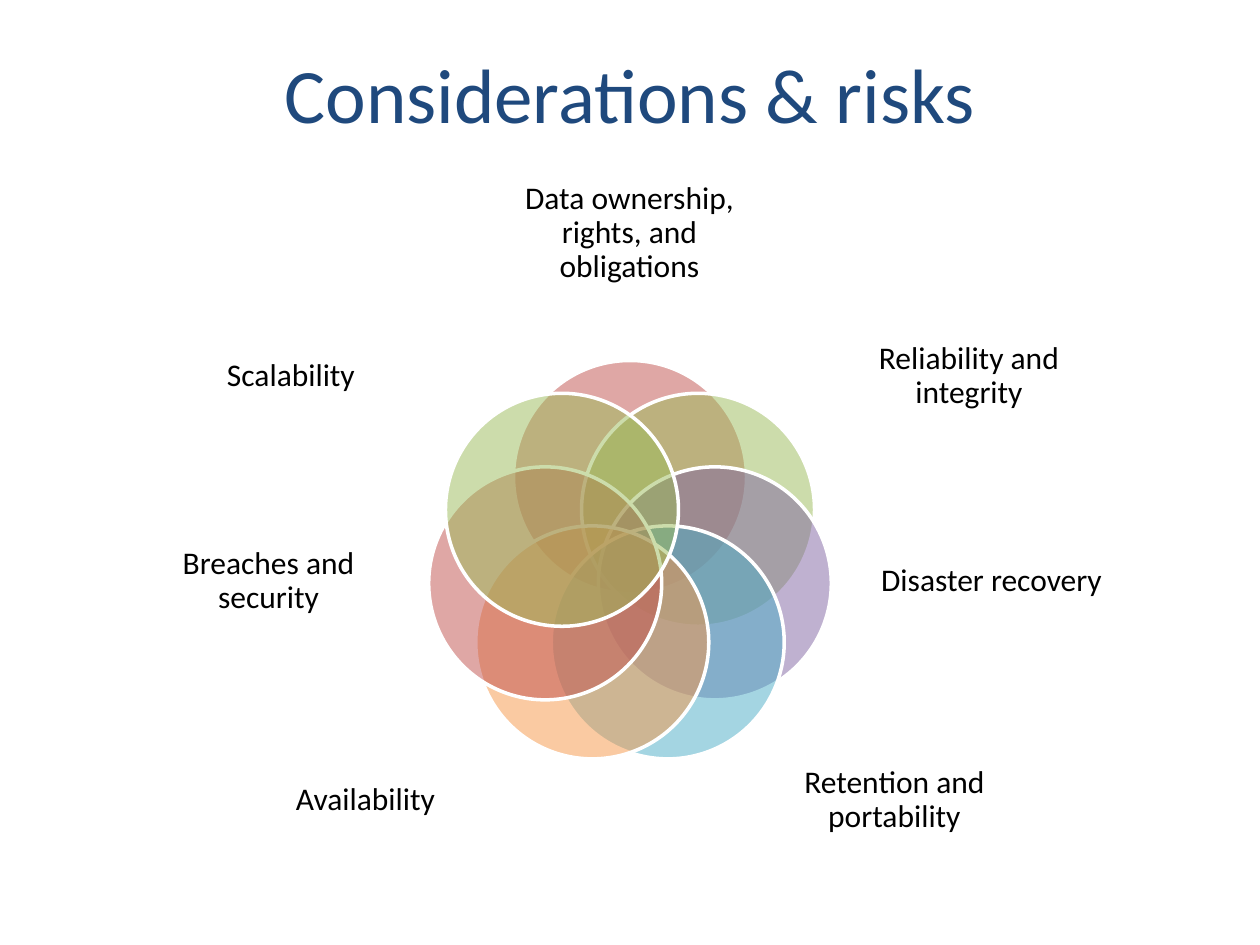
"""Build the considerations and risks slide: seven overlapping circles with labels."""
from math import cos, pi, sin

from lxml import etree
from pptx import Presentation
from pptx.dml.color import RGBColor
from pptx.enum.shapes import MSO_SHAPE
from pptx.enum.text import MSO_ANCHOR, PP_ALIGN
from pptx.oxml.ns import qn
from pptx.util import Inches, Pt

OVAL = MSO_SHAPE.OVAL
MIDDLE = MSO_ANCHOR.MIDDLE
CENTER = PP_ALIGN.CENTER

NAVY = RGBColor(0x1F, 0x49, 0x7D)
BLACK = RGBColor(0x00, 0x00, 0x00)
WHITE = RGBColor(0xFF, 0xFF, 0xFF)
RED = RGBColor(0xC0, 0x50, 0x4D)
GREEN = RGBColor(0x9B, 0xBB, 0x59)
PURPLE = RGBColor(0x80, 0x64, 0xA2)
AQUA = RGBColor(0x4B, 0xAC, 0xC6)
ORANGE = RGBColor(0xF7, 0x96, 0x46)

TITLE = "Considerations & risks"
RISKS = [
    ("Data ownership, rights, and obligations", RED),
    ("Reliability and integrity", GREEN),
    ("Disaster recovery", PURPLE),
    ("Retention and portability", AQUA),
    ("Availability", ORANGE),
    ("Breaches and security", RED),
    ("Scalability", GREEN),
]

PX = Inches(1) / 126
PAGE_WIDTH, PAGE_HEIGHT = 1260, 945
TITLE_BOX = (63, 38, 1134, 110)
TOP_LABEL = (496, 179, 267, 142)
RIGHT_LABELS = [(843, 314, 252, 158), (868, 514, 247, 168), (761, 740, 267, 154)]
LEFT_LABELS = [
    (PAGE_WIDTH - left - width, top, width, height)
    for left, top, width, height in reversed(RIGHT_LABELS)
]
LABEL_BOXES = [TOP_LABEL, *RIGHT_LABELS, *LEFT_LABELS]
RING_X, RING_Y, RING_RADIUS = 630, 564, 87
DIAMETER = 233
LABEL_LIFT = 34


def emu(*lengths):
    return [round(length * PX) for length in lengths]


def format_text(para, size, color):
    para.alignment = CENTER
    para.font.name = "Calibri"
    para.font.size = Pt(size)
    para.font.color.rgb = color


def add_circle(shapes, index, color):
    angle = 2 * pi * index / len(RISKS)
    left = RING_X + RING_RADIUS * sin(angle) - DIAMETER / 2
    top = RING_Y - RING_RADIUS * cos(angle) - DIAMETER / 2
    circle = shapes.add_shape(OVAL, *emu(left, top, DIAMETER, DIAMETER))
    circle.shadow.inherit = False
    circle.fill.solid()
    circle.fill.fore_color.rgb = color
    fill_color = circle.fill._xPr.find(qn("a:solidFill"))[0]
    etree.SubElement(fill_color, qn("a:alpha"), val="50000")
    circle.line.color.rgb = WHITE
    circle.line.width = Pt(2)


def add_label(shapes, text, bounds):
    frame = shapes.add_textbox(*emu(*bounds)).text_frame
    frame.word_wrap = True
    frame.vertical_anchor = MIDDLE
    frame.margin_left = frame.margin_top = frame.margin_right = 0
    frame.margin_bottom = emu(LABEL_LIFT)[0]
    frame.text = text
    para = frame.paragraphs[0]
    para.line_spacing = 0.9
    format_text(para, 18, BLACK)


def main():
    deck = Presentation()
    deck.slide_width, deck.slide_height = emu(PAGE_WIDTH, PAGE_HEIGHT)
    page = deck.slides.add_slide(deck.slide_layouts[5])

    title = page.shapes.title
    title.left, title.top, title.width, title.height = emu(*TITLE_BOX)
    title.text_frame.text = TITLE
    title.text_frame.vertical_anchor = MIDDLE
    format_text(title.text_frame.paragraphs[0], 44, NAVY)

    diagram = page.shapes.add_group_shape().shapes
    for index, ((text, color), bounds) in enumerate(zip(RISKS, LABEL_BOXES)):
        add_circle(diagram, index, color)
        add_label(diagram, text, bounds)

    deck.save("out.pptx")


if __name__ == "__main__":
    main()
